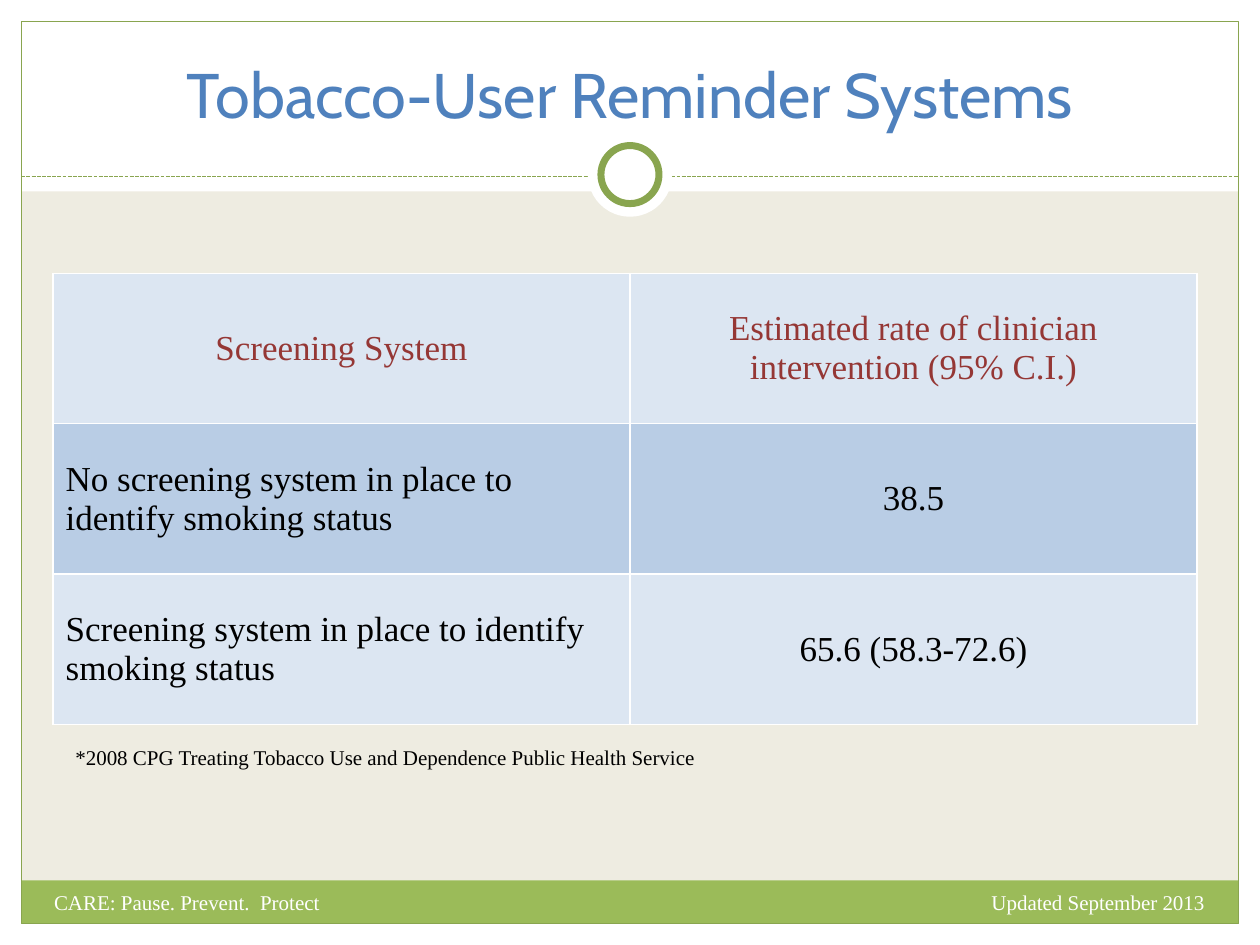
import pptx
import pptx.util
import pptx.dml.color
import pptx.enum.dml
import pptx.enum.shapes
import pptx.enum.text
import pptx.oxml.ns
from lxml import etree

Cm, Pt = pptx.util.Cm, pptx.util.Pt
SHAPE = pptx.enum.shapes.MSO_SHAPE
ALIGN = pptx.enum.text.PP_ALIGN
ANCHOR = pptx.enum.text.MSO_ANCHOR
qn = pptx.oxml.ns.qn

# Content
TITLE = "Tobacco-User Reminder Systems"
ROWS = [
    ("Screening System", "Estimated rate of clinician intervention (95% C.I.)"),
    ("No screening system in place to identify smoking status", "38.5"),
    ("Screening system in place to identify smoking status", "65.6 (58.3-72.6)"),
]
FOOTNOTE = "*2008 CPG Treating Tobacco Use and Dependence Public Health Service"
FOOTER_LEFT = "CARE: Pause. Prevent.  Protect"
FOOTER_RIGHT = "Updated September 2013"

# Colours and measures in centimetres
WHITE, BLACK, BEIGE = "FFFFFF", "000000", "EEECE1"
GREEN, DARK_GREEN, BLUE, RED = "9BBB59", "89A54F", "4F81BD", "953735"
BANDS = ("DCE6F2", "B9CDE5")
WIDTH, HEIGHT, MARGIN = 25.4, 19.05, 0.43
INNER_WIDTH, INNER_HEIGHT = WIDTH - 2 * MARGIN, HEIGHT - 2 * MARGIN
HEADER_HEIGHT, FOOTER_TOP = 3.86, 17.75
RULE_Y, RING_Y = 3.56, 3.52
COLUMNS, ROW_HEIGHT = (11.63, 11.43), 3.03


def colour(value):
    return pptx.dml.color.RGBColor.from_string(value)


def add_plain(page, kind, left, top, width, height, fill=None, line=None, weight=0.75):
    shape = page.shapes.add_shape(kind, Cm(left), Cm(top), Cm(width), Cm(height))
    shape.shadow.inherit = False
    if fill:
        shape.fill.solid()
        shape.fill.fore_color.rgb = colour(fill)
    else:
        shape.fill.background()
    if line:
        shape.line.color.rgb = colour(line)
        shape.line.width = Pt(weight)
    else:
        shape.line.fill.background()


def write(frame, text, size=12, font="Times New Roman", ink=BLACK, align=ALIGN.LEFT):
    para = frame.paragraphs[0]
    para.alignment = align
    span = para.add_run()
    span.text = text
    span.font.size = Pt(size)
    span.font.name = font
    span.font.color.rgb = colour(ink)


def add_text(page, text, left, top, width, height, anchor=ANCHOR.TOP, **style):
    box = page.shapes.add_textbox(Cm(left), Cm(top), Cm(width), Cm(height))
    box.text_frame.word_wrap = True
    box.text_frame.vertical_anchor = anchor
    write(box.text_frame, text, **style)


def set_borders(cell, ink, points):
    properties = cell._tc.get_or_add_tcPr()
    for index, side in enumerate(("a:lnL", "a:lnR", "a:lnT", "a:lnB")):
        line = etree.Element(qn(side), w=str(Pt(points)))
        fill = etree.SubElement(line, qn("a:solidFill"))
        etree.SubElement(fill, qn("a:srgbClr"), val=ink)
        properties.insert(index, line)


def add_frame(page):
    # White margins and header, green footer, thin outline
    for left, top, width, height in (
        (0, HEIGHT - MARGIN, WIDTH, MARGIN),
        (0, 0, WIDTH, HEADER_HEIGHT),
        (0, 0, MARGIN, HEIGHT),
        (WIDTH - MARGIN, 0, MARGIN, HEIGHT),
    ):
        add_plain(page, SHAPE.RECTANGLE, left, top, width, height, fill=WHITE)
    add_plain(page, SHAPE.RECTANGLE, MARGIN, FOOTER_TOP, INNER_WIDTH,
              HEIGHT - MARGIN - FOOTER_TOP, fill=GREEN)
    add_plain(page, SHAPE.RECTANGLE, MARGIN, MARGIN, INNER_WIDTH, INNER_HEIGHT,
              line=DARK_GREEN)

    # Dashed rule with a ring at its middle
    rule = page.shapes.add_connector(
        pptx.enum.shapes.MSO_CONNECTOR.STRAIGHT,
        Cm(MARGIN), Cm(RULE_Y), Cm(WIDTH - MARGIN), Cm(RULE_Y))
    rule.line.color.rgb = colour(DARK_GREEN)
    rule.line.width = Pt(0.75)
    rule.line.dash_style = pptx.enum.dml.MSO_LINE.SQUARE_DOT
    etree.SubElement(rule._element.spPr, qn("a:effectLst"))
    for size, line in ((1.7, None), (1.17, DARK_GREEN)):
        add_plain(page, SHAPE.OVAL, (WIDTH - size) / 2, RING_Y - size / 2, size, size,
                  fill=WHITE, line=line, weight=4)


def add_rates(page):
    table = page.shapes.add_table(
        len(ROWS), len(COLUMNS), Cm(1.07), Cm(5.51),
        Cm(sum(COLUMNS)), Cm(ROW_HEIGHT * len(ROWS))).table
    for column, width in zip(table.columns, COLUMNS):
        column.width = Cm(width)
    for r, texts in enumerate(ROWS):
        table.rows[r].height = Cm(ROW_HEIGHT)
        for c, text in enumerate(texts):
            cell = table.cell(r, c)
            cell.vertical_anchor = ANCHOR.MIDDLE
            cell.fill.solid()
            cell.fill.fore_color.rgb = colour(BANDS[r % 2])
            set_borders(cell, WHITE, 1)
            centred = r == 0 or c == 1
            write(cell.text_frame, text, size=20, ink=BLACK if r else RED,
                  align=ALIGN.CENTER if centred else ALIGN.LEFT)


def main():
    deck = pptx.Presentation()
    deck.slide_width, deck.slide_height = Cm(WIDTH), Cm(HEIGHT)
    page = deck.slides.add_slide(deck.slide_layouts[6])
    page.background.fill.solid()
    page.background.fill.fore_color.rgb = colour(BEIGE)

    add_frame(page)
    add_rates(page)

    # Title, footnote and footer texts
    add_text(page, TITLE, MARGIN, MARGIN, INNER_WIDTH, 2.34, anchor=ANCHOR.BOTTOM,
             size=36, font="Cabin", ink=BLUE, align=ALIGN.CENTER)
    add_text(page, FOOTNOTE, 1.27, 14.88, 22.86, 0.76)
    add_text(page, FOOTER_RIGHT, 16.08, 17.8, 8.46, 1.02, ink=WHITE, align=ALIGN.RIGHT)
    add_text(page, FOOTER_LEFT, 0.84, 17.8, 12.7, 1.02, ink=WHITE)
    deck.save("out.pptx")


if __name__ == "__main__":
    main()
